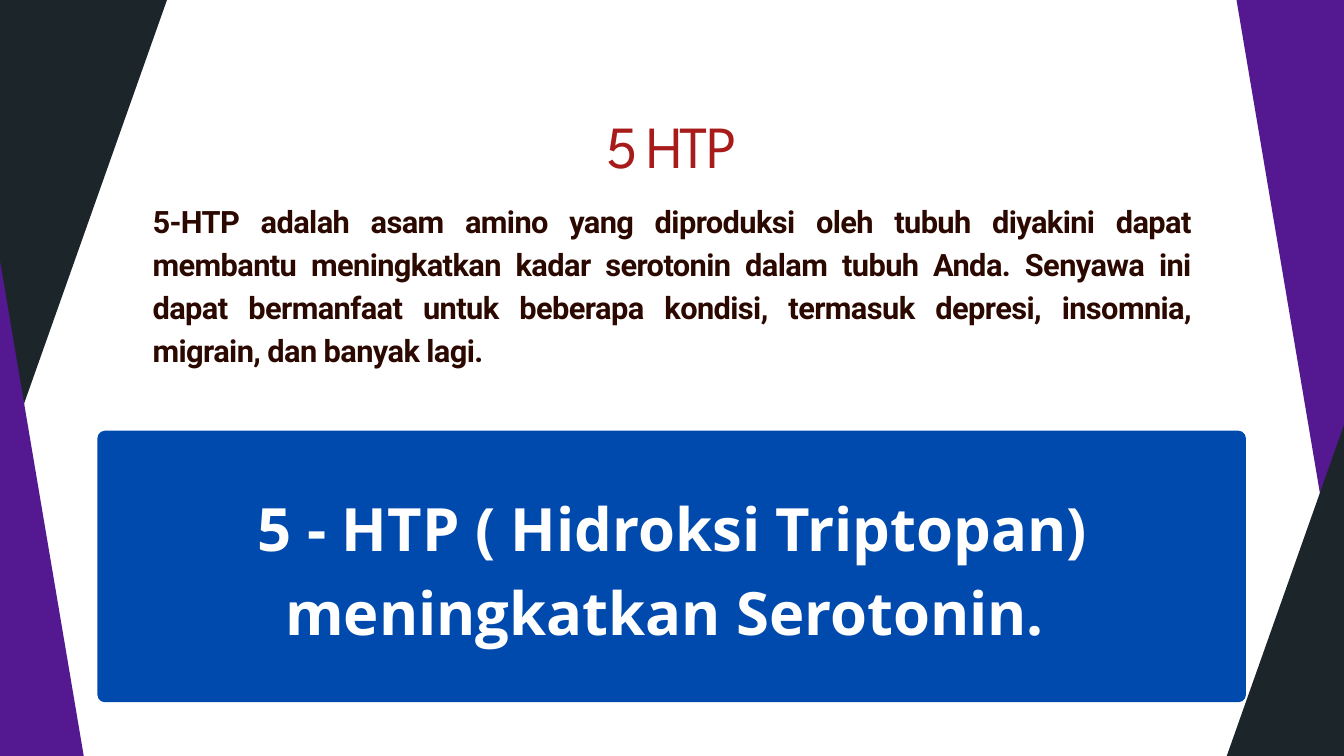
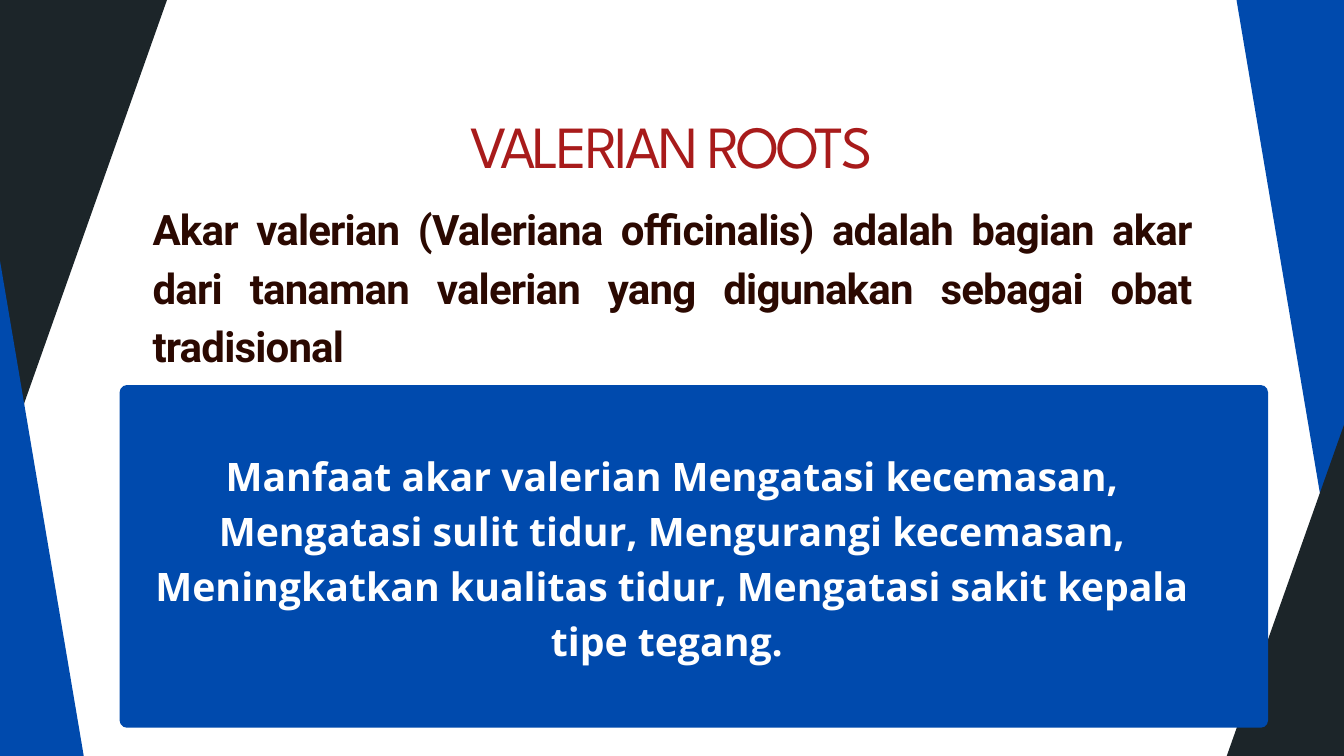
import pptx
import pptx.util
import pptx.dml.color
import pptx.enum.shapes
import pptx.enum.text
import pptx.oxml.ns
import lxml.etree

Inches = pptx.util.Inches
Pt = pptx.util.Pt
ALIGN = pptx.enum.text.PP_ALIGN
SHAPES = pptx.enum.shapes.MSO_SHAPE

COLORS = {
    "dark": "1C2529",
    "purple": "541990",
    "blue": "004AAD",
    "title": "A81B1B",
    "body": "2B0901",
    "white": "FFFFFF",
}

# Shared geometry, in inches
BAND_SIZE = (12.65, 4.84)
PANEL_WIDTH = 17.09
PANEL_RADIUS = 0.11
TITLE_BOX = (2.57, 1.79, 14.85, 0.93)

# Left, top, rotation and color role of each slanted edge band
BANDS = [
    (15.34, 2.37, 260.4, "accent"),
    (15.5, 6, 289.5, "dark"),
    (-8.15, 2.5, 109.5, "dark"),
    (-7.99, 6.13, 80.4, "accent"),
]

# Text styles: font, alignment, line height and letter spacing in points
STYLES = {
    "title": {
        "font": {"name": "League Spartan", "bold": False}, "color": "title",
        "align": ALIGN.CENTER, "leading": 1, "tracking": -0.05,
    },
    "body": {
        "font": {"name": "Roboto", "bold": True}, "color": "body",
        "align": ALIGN.JUSTIFY, "leading": 1.4, "tracking": -0.02,
    },
    "panel": {
        "font": {"name": "Open Sans", "bold": True}, "color": "white",
        "align": ALIGN.CENTER, "leading": 1.4, "tracking": 0,
    },
}

SLIDES = [
    {
        "accent": "purple",
        "title": "5 HTP",
        "body": "5-HTP adalah asam amino yang diproduksi oleh tubuh diyakini dapat "
                "membantu meningkatkan kadar serotonin dalam tubuh Anda. Senyawa ini "
                "dapat bermanfaat untuk beberapa kondisi, termasuk depresi, insomnia, "
                "migrain, dan banyak lagi.",
        "body_box": (2.27, 2.92, 15.46, 2.52),
        "body_size": 33,
        "panel": (1.45, 6.41, 4.04),
        "claim": "5 - HTP ( Hidroksi Triptopan) meningkatkan Serotonin. ",
        "claim_box": (3.45, 7.14, 13.11, 2.44),
        "claim_size": 64,
    },
    {
        "accent": "blue",
        "title": "VALERIAN ROOTS",
        "body": "Akar valerian (Valeriana officinalis) adalah bagian akar dari "
                "tanaman valerian yang digunakan sebagai obat tradisional",
        "body_box": (2.27, 2.9, 15.46, 2.59),
        "body_size": 45,
        "panel": (1.78, 5.73, 5.1),
        "claim": "Manfaat akar valerian Mengatasi kecemasan, Mengatasi sulit tidur, "
                 "Mengurangi kecemasan, Meningkatkan kualitas tidur, Mengatasi sakit "
                 "kepala tipe tegang. ",
        "claim_box": (2.27, 6.62, 15.46, 3.22),
        "claim_size": 42,
    },
]


def set_attributes(target, values):
    for name, value in values.items():
        setattr(target, name, value)


def color(name):
    return pptx.dml.color.RGBColor.from_string(COLORS[name])


class Deck:
    """Holds the presentation, its style and the current slide."""

    def __init__(self):
        self.presentation = pptx.Presentation()
        set_attributes(self.presentation, {
            "slide_width": Inches(20), "slide_height": Inches(11.25)})
        self.slide = None

    def new_slide(self):
        layout = self.presentation.slide_layouts[1]
        self.slide = self.presentation.slides.add_slide(layout)

    def block(self, kind, box, fill, rotation=0):
        shape = self.slide.shapes.add_shape(kind, *map(Inches, box))
        shape.rotation = rotation
        shape.shadow.inherit = False
        shape.fill.solid()
        shape.fill.fore_color.rgb = color(fill)
        shape.line.fill.background()
        return shape

    def bands(self, accent):
        for left, top, rotation, role in BANDS:
            fill = accent if role == "accent" else role
            self.block(SHAPES.RECTANGLE, (left, top, *BAND_SIZE), fill, rotation)

    def panel(self, left, top, height):
        shape = self.block(SHAPES.ROUNDED_RECTANGLE,
                           (left, top, PANEL_WIDTH, height), "blue")
        shape.adjustments[0] = PANEL_RADIUS / height

    def placeholder(self, index, text, box, size, style):
        shape = self.slide.placeholders[index]
        # Bring the text in front of the bands and the panel
        self.slide.shapes._spTree.append(shape._element)
        self.fill_text(shape, text, box, size, style)

    def text_box(self, text, box, size, style):
        shape = self.slide.shapes.add_textbox(*map(Inches, box))
        self.fill_text(shape, text, box, size, style)

    def fill_text(self, shape, text, box, size, style_name):
        style = STYLES[style_name]
        set_attributes(shape, dict(zip(("left", "top", "width", "height"),
                                       map(Inches, box))))
        set_attributes(shape.text_frame, {
            "margin_left": 0, "margin_top": 0,
            "margin_right": 0, "margin_bottom": 0,
            "word_wrap": True,
            "vertical_anchor": pptx.enum.text.MSO_ANCHOR.TOP,
            "auto_size": pptx.enum.text.MSO_AUTO_SIZE.SHAPE_TO_FIT_TEXT,
        })
        paragraph = shape.text_frame.paragraphs[0]
        set_attributes(paragraph, {
            "alignment": style["align"],
            "line_spacing": Pt(size * style["leading"]),
            "space_before": Pt(0), "space_after": Pt(0),
        })
        # No bullet and no hanging indent
        properties = paragraph._p.get_or_add_pPr()
        properties.set("marL", "0")
        properties.set("indent", "0")
        lxml.etree.SubElement(properties, pptx.oxml.ns.qn("a:buNone"))

        run = paragraph.add_run()
        run.text = text
        set_attributes(run.font, {**style["font"], "size": Pt(size)})
        run.font.color.rgb = color(style["color"])
        # Letter spacing grows with the size, in hundredths of a point
        run._r.get_or_add_rPr().set("spc", str(round(size * style["tracking"] * 100)))


def main():
    deck = Deck()
    for content in SLIDES:
        deck.new_slide()
        # Background shapes
        deck.bands(content["accent"])
        deck.panel(*content["panel"])
        # Title, description and highlighted claim
        deck.placeholder(0, content["title"], TITLE_BOX, 64, "title")
        deck.placeholder(1, content["body"], content["body_box"],
                         content["body_size"], "body")
        deck.text_box(content["claim"], content["claim_box"],
                      content["claim_size"], "panel")
    deck.presentation.save("out.pptx")


if __name__ == "__main__":
    main()
